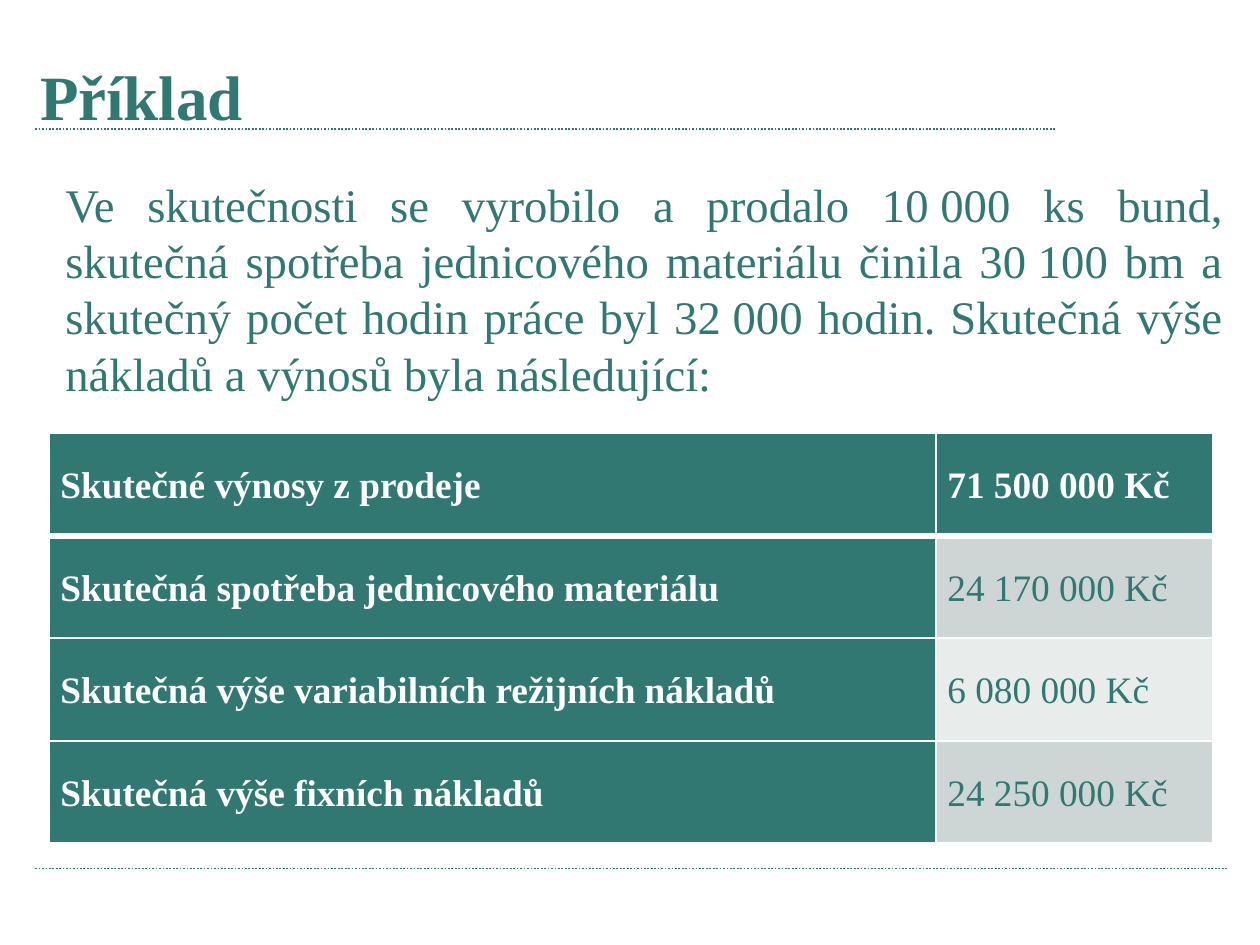
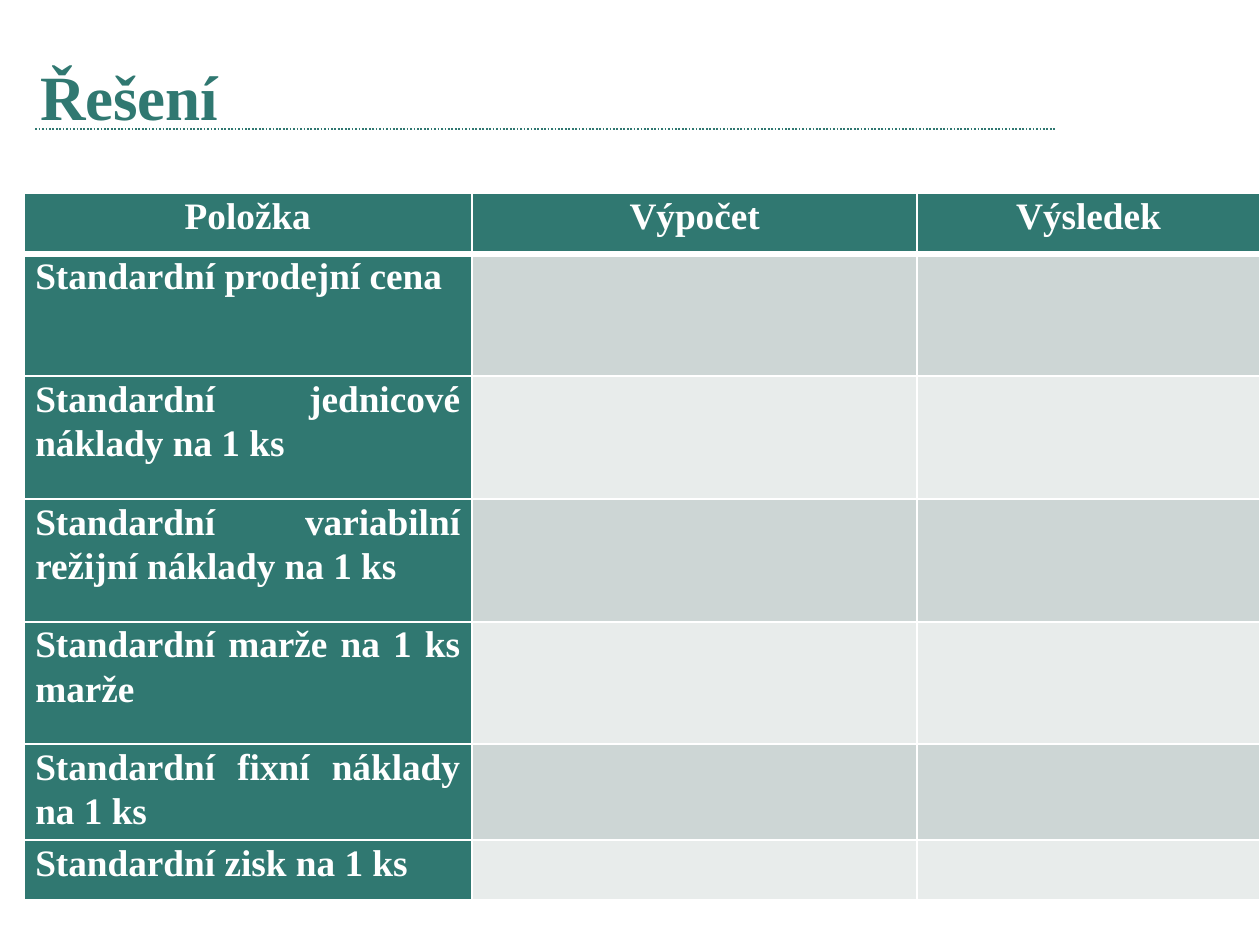
from pptx import Presentation
from pptx.dml.color import RGBColor
from pptx.enum.dml import MSO_LINE
from pptx.enum.shapes import MSO_CONNECTOR
from pptx.enum.text import MSO_ANCHOR, PP_ALIGN
from pptx.oxml.ns import qn
from pptx.util import Inches, Pt
from lxml.etree import SubElement

TEAL = RGBColor(0x30, 0x78, 0x71)
WHITE = RGBColor(0xFF, 0xFF, 0xFF)
BAND_DARK = RGBColor(0xCD, 0xD6, 0xD5)
BAND_LIGHT = RGBColor(0xE8, 0xEC, 0xEB)
FONT = "Times New Roman"
HARD_SPACE = chr(160)

TITLE_BOX = (0.14, 0.29, 6.61, 0.59)
RULES = [(0.21, 6.29, 0.77), (0.21, 7.31, 5.17)]


def grouped(number):
    """Write a number with thousands parted by hard spaces."""
    return f"{number:,}".replace(",", HARD_SPACE)


ACTUAL_TEXT = (
    f"Ve skutečnosti se vyrobilo a prodalo {grouped(10000)} ks bund, skutečná "
    f"spotřeba jednicového materiálu činila {grouped(30100)} bm a skutečný počet "
    f"hodin práce byl {grouped(32000)} hodin. Skutečná výše nákladů a výnosů byla "
    "následující:"
)
ACTUAL_ROWS = [
    (f"Skutečné výnosy z{HARD_SPACE}prodeje", f"{grouped(71500000)} Kč"),
    ("Skutečná spotřeba jednicového materiálu", f"{grouped(24170000)} Kč"),
    ("Skutečná výše variabilních režijních nákladů", f"{grouped(6080000)} Kč"),
    ("Skutečná výše fixních nákladů", f"{grouped(24250000)} Kč"),
]
STANDARD_ROWS = [
    ("Položka", "Výpočet", "Výsledek"),
    ("Standardní prodejní cena", "", ""),
    ("Standardní jednicové náklady na 1 ks", "", ""),
    ("Standardní variabilní režijní náklady na 1 ks", "", ""),
    ("Standardní marže na 1 ks marže", "", ""),
    ("Standardní fixní náklady na 1 ks", "", ""),
    ("Standardní zisk na 1 ks", "", ""),
]


def add_span(para, text, size, color, bold=False):
    span = para.add_run()
    span.text = text
    span.font.name = FONT
    span.font.size = Pt(size)
    span.font.bold = bold
    span.font.color.rgb = color


def add_rule(page, left, right, top):
    rule = page.shapes.add_connector(
        MSO_CONNECTOR.STRAIGHT, Inches(left), Inches(top), Inches(right), Inches(top))
    rule.line.color.rgb = TEAL
    rule.line.width = Pt(0.75)
    rule.line.dash_style = MSO_LINE.ROUND_DOT
    SubElement(rule._element.spPr, qn("a:effectLst"))


def add_text(page, area, text, size, bold=False, align=PP_ALIGN.LEFT):
    box = page.shapes.add_textbox(*map(Inches, area))
    box.text_frame.word_wrap = True
    para = box.text_frame.paragraphs[0]
    para.alignment = align
    add_span(para, text, size, TEAL, bold)
    return box


def add_page(deck, title):
    """Add a page with the shared dotted rules and title."""
    page = deck.slides.add_slide(deck.slide_layouts[6])
    for rule in RULES:
        add_rule(page, *rule)
    frame = add_text(page, TITLE_BOX, title, 27, bold=True).text_frame
    frame.vertical_anchor = MSO_ANCHOR.MIDDLE
    frame.margin_bottom = Inches(0.09)
    return page


def set_borders(cell, row):
    """Thin white borders, with a thick one under the header row."""
    properties = cell._tc.get_or_add_tcPr()
    widths = {"lnL": 1, "lnR": 1,
              "lnT": 3 if row == 1 else 1, "lnB": 3 if row == 0 else 1}
    for position, (tag, width) in enumerate(widths.items()):
        line = properties.makeelement(qn(f"a:{tag}"), {"w": str(Pt(width))})
        fill = SubElement(line, qn("a:solidFill"))
        SubElement(fill, qn("a:srgbClr"), val=str(WHITE))
        properties.insert(position, line)


def add_grid(page, left, top, widths, heights, rows, anchor, header_align):
    """Table with a teal header row and first column, and banded values."""
    table = page.shapes.add_table(
        len(heights), len(widths), Inches(left), Inches(top),
        Inches(sum(widths)), Inches(sum(heights))).table
    table.first_row = table.horz_banding = False
    for column, width in zip(table.columns, widths):
        column.width = Inches(width)
    for row, (height, texts) in enumerate(zip(heights, rows)):
        table.rows[row].height = Inches(height)
        for column, text in enumerate(texts):
            cell = table.cell(row, column)
            heading = row == 0 or column == 0
            band = BAND_DARK if row % 2 else BAND_LIGHT
            cell.fill.solid()
            cell.fill.fore_color.rgb = TEAL if heading else band
            set_borders(cell, row)
            cell.margin_left = cell.margin_right = Inches(0.07)
            cell.margin_top = cell.margin_bottom = 0
            cell.vertical_anchor = anchor
            if text:
                para = cell.text_frame.paragraphs[0]
                para.alignment = PP_ALIGN.JUSTIFY if row else header_align
                para.line_spacing = 1.07
                add_span(para, text, 16, WHITE if heading else TEAL, heading)


def add_example_page(deck):
    page = add_page(deck, "Příklad")
    add_text(page, (0.29, 1, 7.09, 2.12), ACTUAL_TEXT, 20, align=PP_ALIGN.JUSTIFY)
    add_grid(page, 0.29, 2.58, [5.28, 1.65], [0.61] * 4, ACTUAL_ROWS,
             MSO_ANCHOR.MIDDLE, PP_ALIGN.JUSTIFY)


def add_solution_page(deck):
    page = add_page(deck, "Řešení")
    add_grid(page, 0.14, 1.15, [2.67, 2.65, 2.04], [0.36, *[0.73] * 4, 0.56, 0.36],
             STANDARD_ROWS, MSO_ANCHOR.TOP, PP_ALIGN.CENTER)


def main():
    deck = Presentation()
    deck.slide_width = Inches(7.5)
    deck.slide_height = deck.slide_width * 3 // 4
    add_example_page(deck)
    add_solution_page(deck)
    deck.save("out.pptx")


if __name__ == "__main__":
    main()
